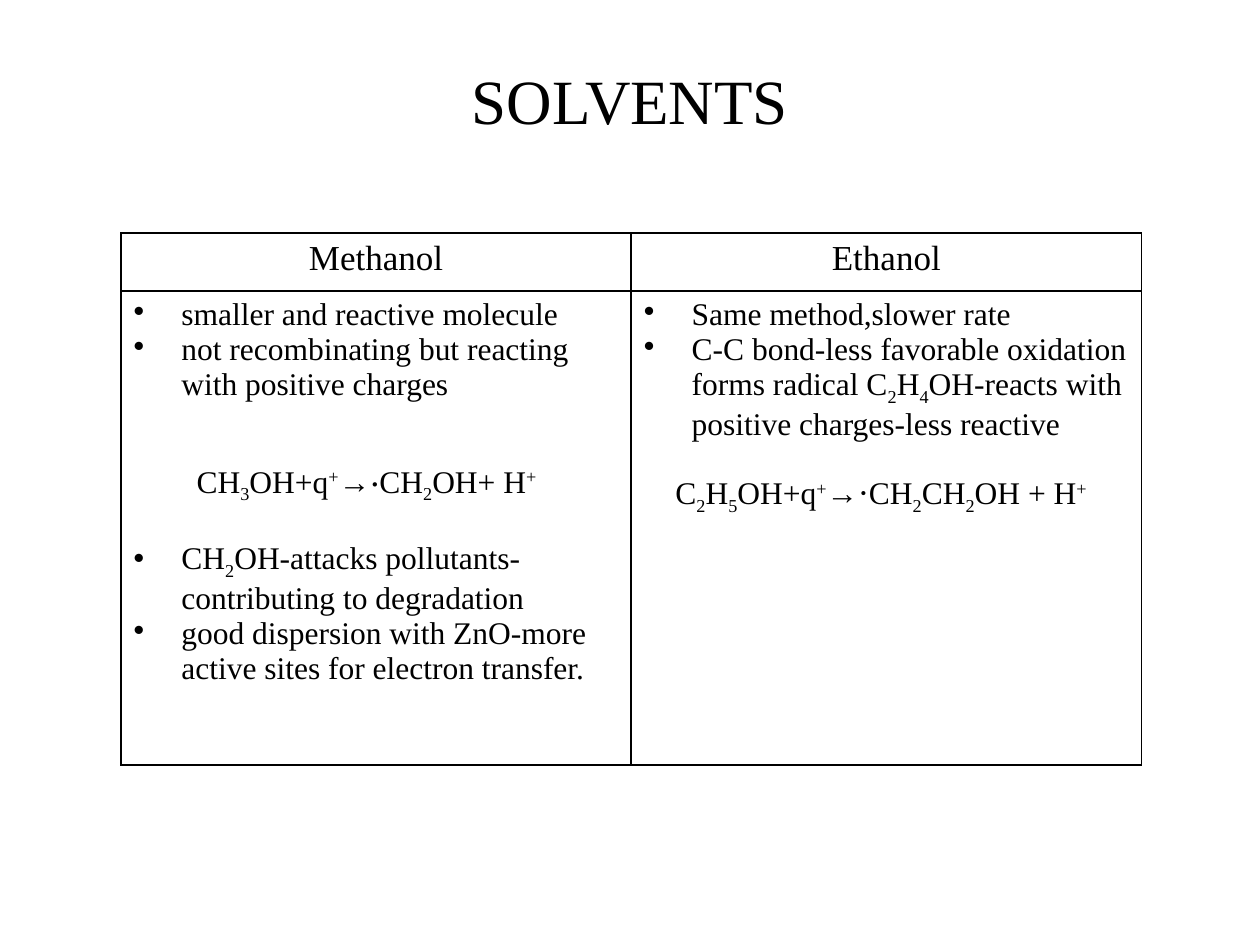
"""Build a slide comparing methanol and ethanol as solvents."""
from lxml import etree
from pptx import Presentation, util as u
from pptx.dml.color import RGBColor
from pptx.enum import text
from pptx.oxml.ns import qn

FONT, INK, PAPER = "Times New Roman", "000000", "FFFFFF"
SCRIPTS = {"_": "-25000", "^": "30000", "~": "10000"}
LINE_GAP, HANGING, DOT_SIZE = 20, 0.38, 36

TITLE = "SOLVENTS"
SOLVENTS = [
    {"name": "Methanol", "notes": [
        {"text": "smaller and reactive molecule"},
        {"text": "not recombinating but reacting with positive charges"},
        {"text": "CH|_3|OH+q|^+|→|~.|CH|_2|OH+ H|^+", "indent": 0.5, "gap": True},
        {"text": "CH|_2|OH-attacks pollutants-contributing to degradation", "gap": True},
        {"text": "good dispersion with ZnO-more active sites for electron transfer."},
    ]},
    {"name": "Ethanol", "notes": [
        {"text": "Same method,slower rate"},
        {"text": "C-C bond-less favorable oxidation forms radical "
                 "C|_2|H|_4|OH-reacts with positive charges-less reactive"},
        {"text": "C|_2|H|_5|OH+q|^+|→⋅CH|_2|CH|_2|OH + H|^+", "indent": 0.25, "gap": True},
    ]},
]
LEFT, TOP, COLUMN_WIDTH, ROW_HEIGHTS = 0.96, 1.85, 4.05, (0.46, 3.76)


def color(value):
    return RGBColor.from_string(value)


def style(paragraph, size):
    paragraph.font.name = FONT
    paragraph.font.size = u.Pt(size)
    paragraph.font.color.rgb = color(INK)


def add_heading(paragraph, words, size):
    paragraph.alignment = text.PP_ALIGN.CENTER
    paragraph.add_run().text = words
    style(paragraph, size)


def add_note(paragraph, note):
    properties = paragraph._p.get_or_add_pPr()
    if "indent" in note:
        properties.set("marL", str(u.Inches(note["indent"])))
    else:
        properties.set("marL", str(u.Inches(HANGING)))
        properties.set("indent", str(-u.Inches(HANGING)))
        etree.SubElement(properties, qn("a:buChar"), char="•")
    if note.get("gap"):
        paragraph.space_before = u.Pt(LINE_GAP)
    style(paragraph, 18)
    for part in note["text"].split("|"):
        run = paragraph.add_run()
        run.text = part.lstrip("_^~")
        if part[0] in SCRIPTS:
            run._r.get_or_add_rPr().set("baseline", SCRIPTS[part[0]])
        if part[0] == "~":
            run.font.size = u.Pt(DOT_SIZE)


def style_cell(cell):
    properties = cell._tc.get_or_add_tcPr()
    for side in ("lnL", "lnR", "lnT", "lnB"):
        line = etree.SubElement(properties, qn(f"a:{side}"), w=str(u.Pt(1)))
        fill = etree.SubElement(line, qn("a:solidFill"))
        etree.SubElement(fill, qn("a:srgbClr"), val=INK)
    cell.fill.solid()
    cell.fill.fore_color.rgb = color(PAPER)


def add_title(slide):
    box = slide.shapes.add_textbox(*map(u.Inches, (3.26, 0.28, 3.48, 1.09)))
    frame = box.text_frame
    frame.word_wrap = True
    frame.vertical_anchor = text.MSO_ANCHOR.MIDDLE
    paragraph = frame.paragraphs[0]
    paragraph.line_spacing = 0.9
    add_heading(paragraph, TITLE, 36)


def add_comparison(slide):
    width = COLUMN_WIDTH * len(SOLVENTS)
    table = slide.shapes.add_table(
        len(ROW_HEIGHTS), len(SOLVENTS),
        *map(u.Inches, (LEFT, TOP, width, sum(ROW_HEIGHTS)))).table
    for row, height in zip(table.rows, ROW_HEIGHTS):
        row.height = u.Inches(height)
    for column, solvent in enumerate(SOLVENTS):
        table.columns[column].width = u.Inches(COLUMN_WIDTH)
        header, body = table.cell(0, column), table.cell(1, column)
        for cell in (header, body):
            style_cell(cell)
        add_heading(header.text_frame.paragraphs[0], solvent["name"], 20)
        frame = body.text_frame
        for index, note in enumerate(solvent["notes"]):
            add_note(frame.add_paragraph() if index else frame.paragraphs[0], note)


def main():
    presentation = Presentation()
    presentation.slide_width, presentation.slide_height = u.Inches(10), u.Inches(7.5)
    slide = presentation.slides.add_slide(presentation.slide_layouts[6])
    add_comparison(slide)
    add_title(slide)
    presentation.save("out.pptx")


if __name__ == "__main__":
    main()
